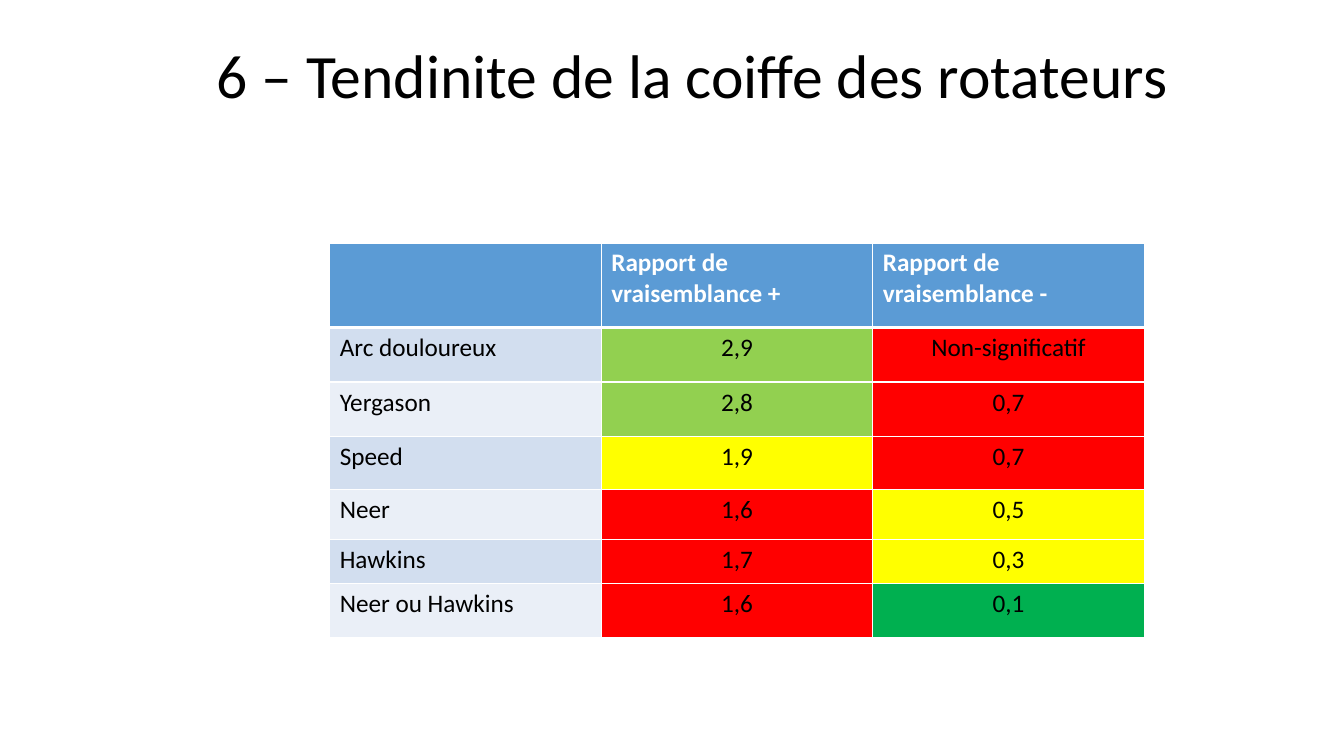
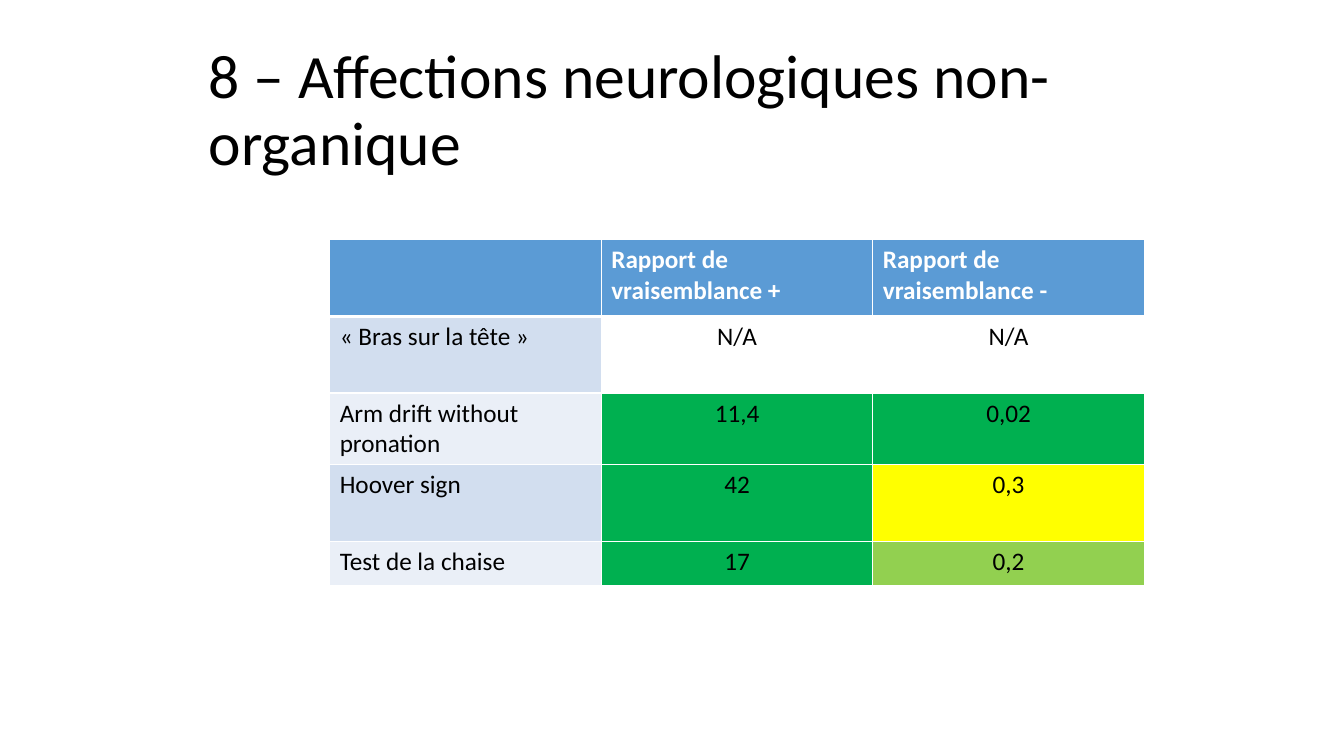
"""Build two slides of likelihood ratios for clinical tests."""
from dataclasses import dataclass

from lxml.etree import SubElement
from pptx import Presentation
from pptx.dml.color import RGBColor
from pptx.enum.text import MSO_ANCHOR, PP_ALIGN
from pptx.oxml.ns import qn
from pptx.slide import Slide
from pptx.table import _Cell
from pptx.text.text import TextFrame
from pptx.util import Inches, Pt

FONT = "Calibri"
COLORS = {
    "black": "000000",
    "white": "FFFFFF",
    "head": "5B9BD5",
    "odd": "D2DEEF",
    "even": "EAEFF7",
    "red": "FF0000",
    "yellow": "FFFF00",
    "lime": "92D050",
    "green": "00B050",
}
HEADS = ("", "Rapport de vraisemblance +", "Rapport de vraisemblance -")
LEFT, WIDTH = 3.27, 8.08
RIGHT = 12.42


@dataclass
class Test:
    name: str
    high: int
    plus: str
    plus_fill: str
    minus: str
    minus_fill: str


@dataclass
class Page:
    title: str
    left: float
    top: float
    highs: tuple[float, ...]
    tests: tuple[tuple[str, str, str, str, str], ...]


PAGES = (
    Page(
        "6 – Tendinite de la coiffe des rotateurs", 2.05, 2.41,
        (0.84, 0.54, 0.54, 0.53, 0.49, 0.44, 0.54),
        (
            ("Arc douloureux", "2,9", "lime", "Non-significatif", "red"),
            ("Yergason", "2,8", "lime", "0,7", "red"),
            ("Speed", "1,9", "yellow", "0,7", "red"),
            ("Neer", "1,6", "red", "0,5", "yellow"),
            ("Hawkins", "1,7", "red", "0,3", "yellow"),
            ("Neer ou Hawkins", "1,6", "red", "0,1", "green"),
        ),
    ),
    Page(
        "8 – Affections neurologiques non-organique", 1.97, 2.38,
        (0.76, 0.76, 0.71, 0.76, 0.44),
        (
            ("« Bras sur la tête »", "N/A", "white", "N/A", "white"),
            ("Arm drift without pronation", "11,4", "green", "0,02", "green"),
            ("Hoover sign", "42", "green", "0,3", "yellow"),
            ("Test de la chaise", "17", "green", "0,2", "lime"),
        ),
    ),
)


def color(name: str) -> RGBColor:
    """Return the named colour."""
    return RGBColor.from_string(COLORS[name])


def write(frame: TextFrame, text: str, *, size: float = 18, ink: str = "black",
          bold: bool = False, align: PP_ALIGN = PP_ALIGN.LEFT,
          space: float = 1.0) -> None:
    """Write one formatted paragraph into a frame."""
    frame.word_wrap = True
    para = frame.paragraphs[0]
    para.text = text
    para.alignment = align
    para.line_spacing = space
    para.font.name = FONT
    para.font.size = Pt(size)
    para.font.bold = bold
    para.font.color.rgb = color(ink)


def edge(cell: _Cell, row: int) -> None:
    """Draw white borders, thicker between head and body."""
    props = cell._tc.get_or_add_tcPr()
    wide = {(0, "B"), (1, "T")}
    for side in "LRTB":
        width = Pt(3 if (row, side) in wide else 1)
        line = SubElement(props, qn(f"a:ln{side}"), w=str(width))
        fill = SubElement(line, qn("a:solidFill"))
        SubElement(fill, qn("a:srgbClr"), val=COLORS["white"])


def paint(cell: _Cell, row: int, text: str, fill: str, **style) -> None:
    """Fill, border and write one cell."""
    edge(cell, row)
    cell.fill.solid()
    cell.fill.fore_color.rgb = color(fill)
    write(cell.text_frame, text, **style)


def add_title(slide: Slide, page: Page) -> None:
    """Add the page title."""
    box = slide.shapes.add_textbox(Inches(page.left), Inches(0.4),
                                   Inches(RIGHT - page.left), Inches(1.45))
    box.text_frame.vertical_anchor = MSO_ANCHOR.TOP
    write(box.text_frame, page.title, size=44, space=0.9)


def add_grid(slide: Slide, page: Page) -> None:
    """Add the table of ratios."""
    table = slide.shapes.add_table(
        len(page.highs), len(HEADS), Inches(LEFT), Inches(page.top),
        Inches(WIDTH), Inches(sum(page.highs))).table
    table.horz_banding = False
    for row, high in zip(table.rows, page.highs):
        row.height = Inches(high)
    for col, text in enumerate(HEADS):
        paint(table.cell(0, col), 0, text, "head", ink="white", bold=True)
    for row, (name, plus, good, minus, bad) in enumerate(page.tests, 1):
        paint(table.cell(row, 0), row, name, "odd" if row % 2 else "even")
        for col, (text, fill) in enumerate(((plus, good), (minus, bad)), 1):
            paint(table.cell(row, col), row, text, fill, align=PP_ALIGN.CENTER)


def main() -> None:
    """Build and save the deck."""
    deck = Presentation()
    deck.slide_width, deck.slide_height = Inches(13.33), Inches(7.5)
    for page in PAGES:
        slide = deck.slides.add_slide(deck.slide_layouts[6])
        add_title(slide, page)
        add_grid(slide, page)
    deck.save("out.pptx")


if __name__ == "__main__":
    main()
